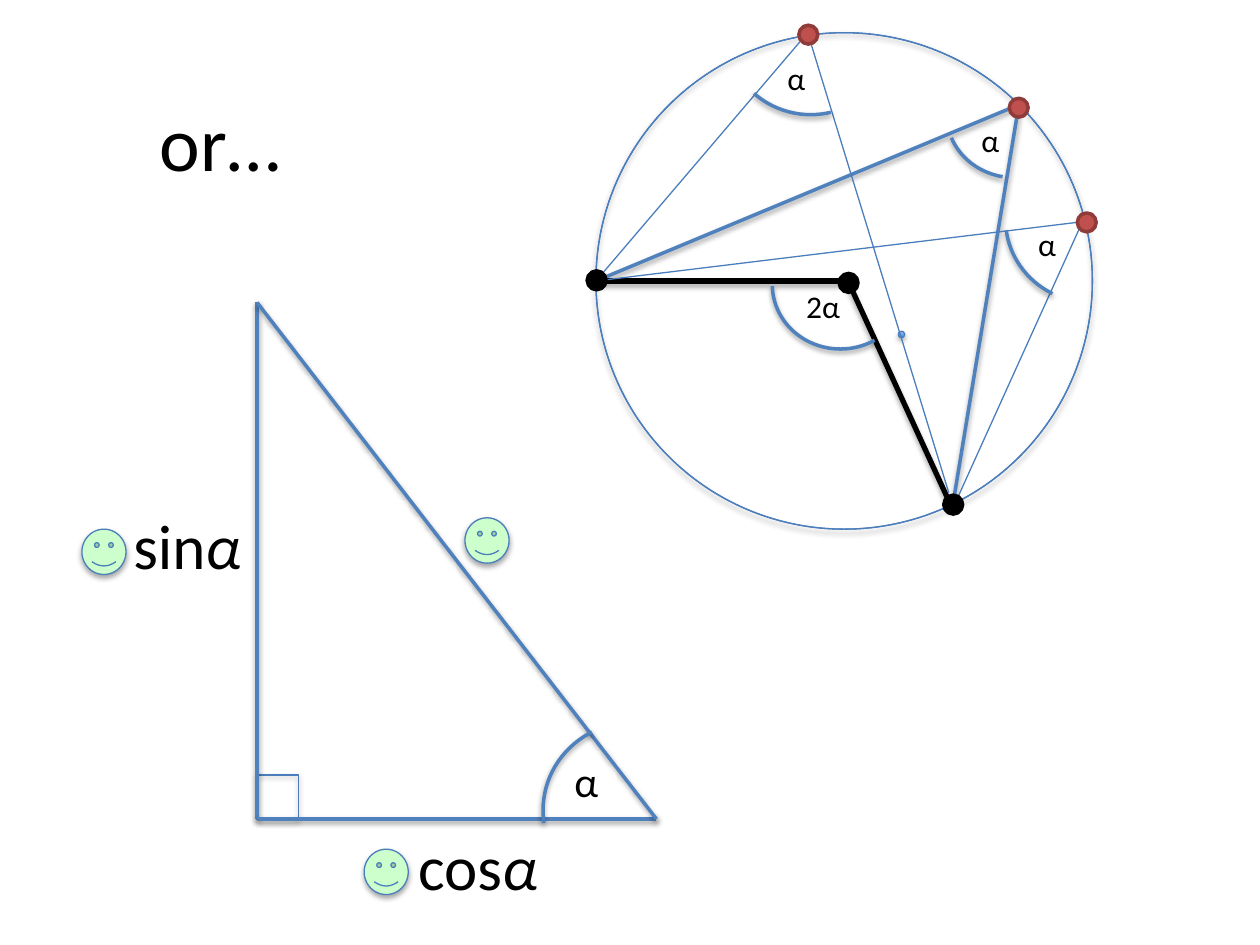
from dataclasses import dataclass

from lxml.etree import SubElement
from pptx import Presentation
from pptx.dml.color import RGBColor
from pptx.enum.dml import MSO_LINE_DASH_STYLE as Dash
from pptx.enum.shapes import MSO_CONNECTOR, MSO_SHAPE as Kind
from pptx.enum.text import MSO_AUTO_SIZE as AutoSize
from pptx.oxml.ns import qn
from pptx.util import Inches, Pt


@dataclass(frozen=True)
class Theme:
    font: str = "Calibri"
    ink: str = "000000"
    blue: str = "4F81BD"
    outline: str = "4B7EBC"
    red: str = "C0504D"
    dark_red: str = "8E3B39"
    smile: str = "CCFFCC"
    gradient: tuple = ("3F80CE", "A4C4FF")
    thin: float = 0.75
    medium: float = 2
    thick: float = 3
    small: int = 18
    angle: int = 24
    formula: int = 36
    heading: int = 44


THEME = Theme()

# shadow: opacity in percent, distance in points
SOFT, STRONG = (35, 1.8), (38, 1.6)

# line style: colour, width, shadow
RADIUS = (THEME.ink, THEME.thick, SOFT)
BOLD = (THEME.blue, THEME.medium, STRONG)
THIN = (THEME.outline, THEME.thin, None)
OUTLINE = (THEME.outline, THEME.thin, SOFT)

CENTER, LEFT, BOTTOM = (6.73, 2.23), (4.73, 2.23), (7.56, 4.04)
TOP, UPPER, RIGHT = (6.41, 0.26), (8.09, 0.83), (8.67, 1.75)
APEX, CORNER, TIP = (2.04, 2.4), (2.04, 6.5), (5.21, 6.5)

LINES = [
    (LEFT, CENTER, RADIUS), (CENTER, BOTTOM, RADIUS),
    (LEFT, UPPER, BOLD), ((8.09, 0.81), (7.56, 4.02), BOLD),
    (APEX, CORNER, BOLD), (TIP, CORNER, BOLD), (APEX, TIP, BOLD),
    (TOP, (7.53, 3.91), THIN), (TOP, LEFT, THIN),
    (LEFT, RIGHT, THIN), ((8.6, 1.74), BOTTOM, THIN),
]

# box, start and end in degrees clockwise from the right
ARCS = [
    ((7.51, 0.39, 1.08, 1.02), 100.42, 158.73),
    ((6.13, 1.75, 1.08, 1.02), 58.38, 178.86),
    ((4.31, 5.73, 1.45, 1.4), 171.97, 241.44),
    ((5.76, -0.41, 1.35, 1.32), 76.03, 132.48),
    ((7.98, 1.08, 1.35, 1.32), 117.07, 172.59),
]

# box, upright text, italic text, size, wraps
LABELS = [
    ((7.69, 0.91, 0.28, 0.4), "α", "", THEME.small, True),
    ((6.15, 0.42, 0.28, 0.4), "α", "", THEME.small, True),
    ((8.14, 1.74, 0.28, 0.4), "α", "", THEME.small, True),
    ((6.3, 2.23, 0.66, 0.4), "2α", "", THEME.small, True),
    ((4.46, 5.95, 0.39, 0.5), "α", "", THEME.angle, False),
    ((3.22, 6.52, 1.16, 0.71), "cos", "α", THEME.formula, False),
    ((0.96, 3.97, 1.07, 0.71), "sin", "α", THEME.formula, False),
    ((1.17, 0.7, 1.21, 0.84), "or…", "", THEME.heading, False),
]

SMILEYS = [(0.65, 4.2), (2.89, 6.74), (3.69, 4.11)]
SMILEY_SIZE = (0.35, 0.36)

DOT = 0.15
RED_DOTS = [(8.01, 0.78), (6.34, 0.2), (8.55, 1.69)]
BLACK_DOTS = [(6.66, 2.17), (4.66, 2.15), (7.49, 3.93)]


def rgb(color):
    return RGBColor.from_string(color)


def inches(values):
    return [Inches(value) for value in values]


def set_stroke(shape, style):
    """Set line and shadow; the fill must be set before."""
    color, width, shadow = style
    shape.line.color.rgb = rgb(color)
    shape.line.width = Pt(width)
    effects = SubElement(shape.element.spPr, qn("a:effectLst"))
    if shadow:
        opacity, distance = shadow
        outer = SubElement(effects, qn("a:outerShdw"), blurRad=str(Pt(3.1)),
                           dist=str(Pt(distance)), dir="5400000", rotWithShape="0")
        black = SubElement(outer, qn("a:srgbClr"), val=THEME.ink)
        SubElement(black, qn("a:alpha"), val=str(opacity * 1000))


def add_figure(slide, kind, box, fill, style, adjustments=()):
    """Add a preset shape; fill is a colour, a pair of colours or None."""
    shape = slide.shapes.add_shape(kind, *inches(box))
    for index, value in enumerate(adjustments):
        shape.adjustments[index] = value
    if fill is None:
        shape.fill.background()
    elif isinstance(fill, tuple):
        shape.fill.gradient()
        shape.fill.gradient_angle = 90
        for stop, color in zip(shape.fill.gradient_stops, fill):
            stop.color.rgb = rgb(color)
    else:
        shape.fill.solid()
        shape.fill.fore_color.rgb = rgb(fill)
    set_stroke(shape, style)
    return shape


def add_line(slide, start, end, style):
    line = slide.shapes.add_connector(MSO_CONNECTOR.STRAIGHT, *inches(start + end))
    set_stroke(line, style)


def add_label(slide, box, upright, italic, size, wraps):
    frame = slide.shapes.add_textbox(*inches(box)).text_frame
    frame.word_wrap = wraps
    frame.auto_size = AutoSize.SHAPE_TO_FIT_TEXT
    for text, slanted in ((upright, None), (italic, True)):
        if text:
            run = frame.paragraphs[0].add_run()
            run.text = text
            run.font.name = THEME.font
            run.font.size = Pt(size)
            run.font.italic = slanted
            run.font.color.rgb = rgb(THEME.ink)


def main():
    presentation = Presentation()
    presentation.slide_width, presentation.slide_height = inches((10, 7.5))
    slide = presentation.slides.add_slide(presentation.slide_layouts[6])

    add_figure(slide, Kind.DONUT, (4.73, 0.26, 3.94, 3.94), THEME.gradient, OUTLINE, [0])
    add_figure(slide, Kind.OVAL, (7.13, 2.63, 0.05, 0.05), THEME.gradient, OUTLINE)
    right_angle = add_figure(slide, Kind.FRAME, (2.04, 6.15, 0.33, 0.35),
                             THEME.gradient, OUTLINE, [0])
    right_angle.line.dash_style = Dash.SQUARE_DOT

    for line in LINES:
        add_line(slide, *line)
    for box, *degrees in ARCS:
        # a preset angle counts 60000 units a degree, an adjustment 100000 units
        add_figure(slide, Kind.ARC, box, None, BOLD, [angle * 0.6 for angle in degrees])
    for label in LABELS:
        add_label(slide, *label)
    for place in SMILEYS:
        add_figure(slide, Kind.SMILEY_FACE, place + SMILEY_SIZE, THEME.smile, OUTLINE, [0.05])
    for places, fill, edge in ((RED_DOTS, THEME.red, THEME.dark_red),
                               (BLACK_DOTS, THEME.ink, THEME.ink)):
        for place in places:
            add_figure(slide, Kind.OVAL, place + (DOT, DOT), fill, (edge, THEME.medium, None))

    presentation.save("out.pptx")


if __name__ == "__main__":
    main()
